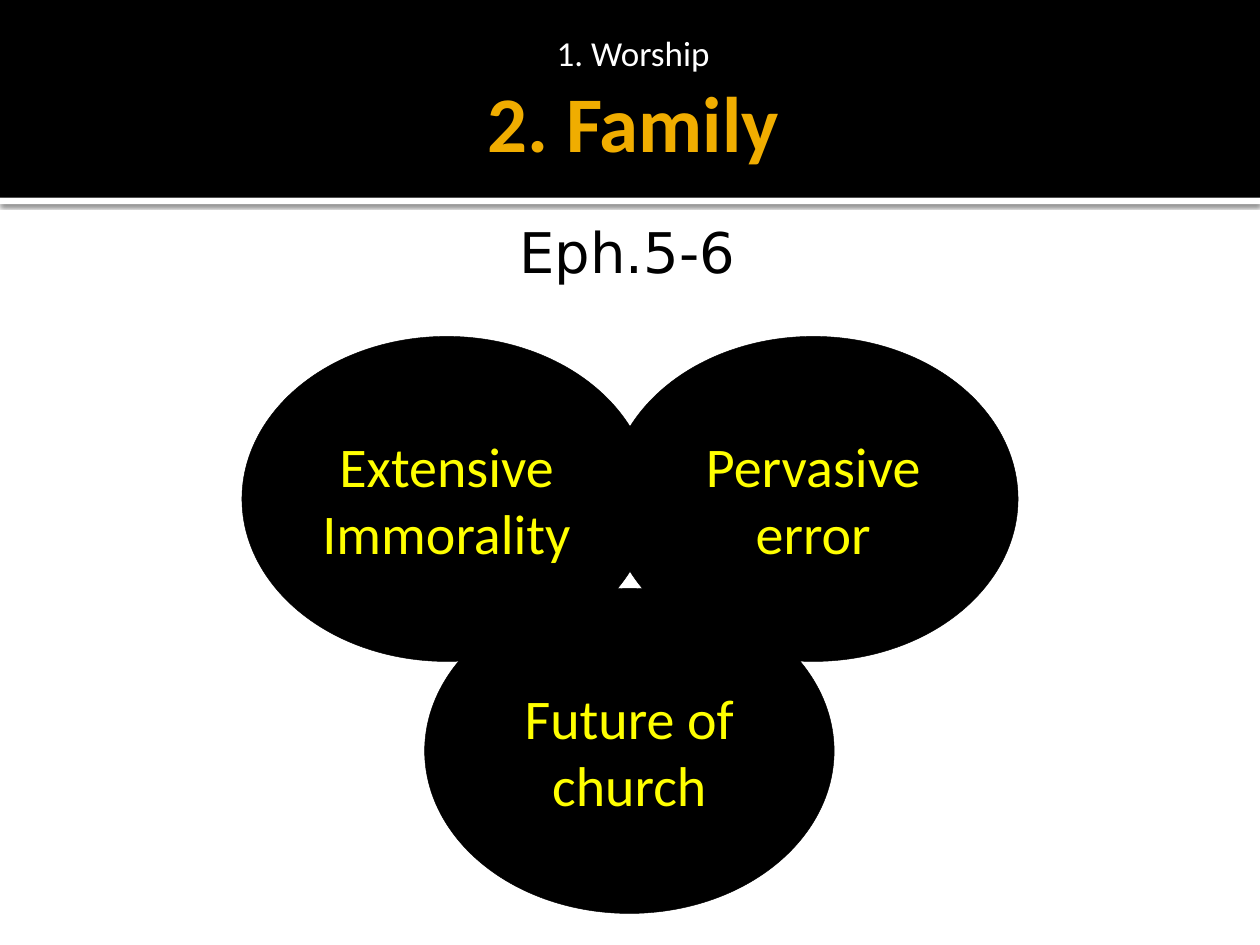
"""Builds the Family slide with a title band and three overlapping ellipses."""
from lxml import etree
from pptx import Presentation
from pptx.dml.color import RGBColor
from pptx.enum.shapes import MSO_SHAPE
from pptx.enum.text import MSO_ANCHOR, MSO_AUTO_SIZE, PP_ALIGN
from pptx.oxml import parse_xml
from pptx.oxml.ns import nsdecls, qn
from pptx.util import Inches, Pt

RECTANGLE = MSO_SHAPE.RECTANGLE
ELLIPSE = MSO_SHAPE.OVAL
CENTER = PP_ALIGN.CENTER
TOP = MSO_ANCHOR.TOP
MIDDLE = MSO_ANCHOR.MIDDLE
NO_AUTOFIT = MSO_AUTO_SIZE.NONE

BLACK = RGBColor(0x00, 0x00, 0x00)
WHITE = RGBColor(0xFF, 0xFF, 0xFF)
GOLD = RGBColor(0xF0, 0xAD, 0x00)
YELLOW = RGBColor(0xFF, 0xFF, 0x00)

ELLIPSE_WIDTH, ELLIPSE_HEIGHT = 3.25, 2.58
UPPER_TOP, LOWER_TOP = 2.67, 4.67


class SlideBuilder:
    def __init__(self, slide):
        self.slide = slide
        self.font = "Calibri"

    def add_run(self, paragraph, text, size, color, bold=False, font=None):
        run = paragraph.add_run()
        run.text = text
        run.font.name = font or self.font
        run.font.size = Pt(size)
        run.font.bold = bold
        run.font.color.rgb = color

    def prepare_frame(self, shape, anchor, insets):
        frame = shape.text_frame
        frame.word_wrap = True
        frame.auto_size = NO_AUTOFIT
        frame.vertical_anchor = anchor
        (frame.margin_left, frame.margin_top,
         frame.margin_right, frame.margin_bottom) = map(Inches, insets)
        paragraph = frame.paragraphs[0]
        paragraph.alignment = CENTER
        return paragraph

    def add_filled(self, kind, box, color):
        shape = self.slide.shapes.add_shape(kind, *map(Inches, box))
        shape.shadow.inherit = False
        shape.fill.solid()
        shape.fill.fore_color.rgb = color
        shape.line.fill.background()
        return shape

    def add_shadow(self, shape):
        effects = shape._element.spPr.find(qn("a:effectLst"))
        effects.append(parse_xml(
            f'<a:outerShdw {nsdecls("a")} blurRad="{Pt(2.5)}" dist="{Pt(0.8)}" '
            'dir="5400000" rotWithShape="0"/>'))
        color = etree.SubElement(effects[0], qn("a:srgbClr"), val="000000")
        etree.SubElement(color, qn("a:alpha"), val="60000")

    def add_title(self, box, previous, current):
        title = self.slide.shapes.title
        title.left, title.top, title.width, title.height = map(Inches, box)
        self.slide.shapes._spTree.append(title._element)
        paragraph = self.prepare_frame(title, MIDDLE, (0.1, 0.05, 0.05, 0.05))
        self.add_run(paragraph, previous, 20, WHITE)
        paragraph.add_line_break()
        self.add_run(paragraph, current, 45, GOLD, bold=True)

    def add_text(self, box, text):
        text_box = self.slide.shapes.add_textbox(*map(Inches, box))
        paragraph = self.prepare_frame(text_box, TOP, (0.06, 0.15, 0.1, 0.05))
        self.add_run(paragraph, text, 32, BLACK, font="DejaVu Sans")

    def add_ellipse(self, left, top, lines):
        box = (left, top, ELLIPSE_WIDTH, ELLIPSE_HEIGHT)
        shape = self.add_filled(ELLIPSE, box, BLACK)
        shape.line.color.rgb = BLACK
        shape.line.width = Pt(0.25)
        paragraph = self.prepare_frame(shape, MIDDLE, (0.1, 0.05, 0.1, 0.05))
        for index, line in enumerate(lines):
            if index:
                paragraph.add_line_break()
            self.add_run(paragraph, line, 32, YELLOW)


def main():
    presentation = Presentation()
    presentation.slide_width = Inches(10)
    presentation.slide_height = Inches(7.5)
    slide = presentation.slides.add_slide(presentation.slide_layouts[5])
    builder = SlideBuilder(slide)

    strip = builder.add_filled(RECTANGLE, (0, 1.57, 10, 0.05), WHITE)
    builder.add_shadow(strip)
    builder.add_filled(RECTANGLE, (0, 0, 10, 1.57), BLACK)
    builder.add_title((0.5, 0.11, 9, 1.37), "1. Worship", "2. Family")
    builder.add_text((0.25, 1.58, 9.5, 5.67), "Eph.5-6")

    for left, top, lines in (
        (1.92, UPPER_TOP, ["Extensive Immorality"]),
        (3.37, LOWER_TOP, ["Future of", "church"]),
        (4.83, UPPER_TOP, ["Pervasive error"]),
    ):
        builder.add_ellipse(left, top, lines)

    presentation.save("out.pptx")


if __name__ == "__main__":
    main()
